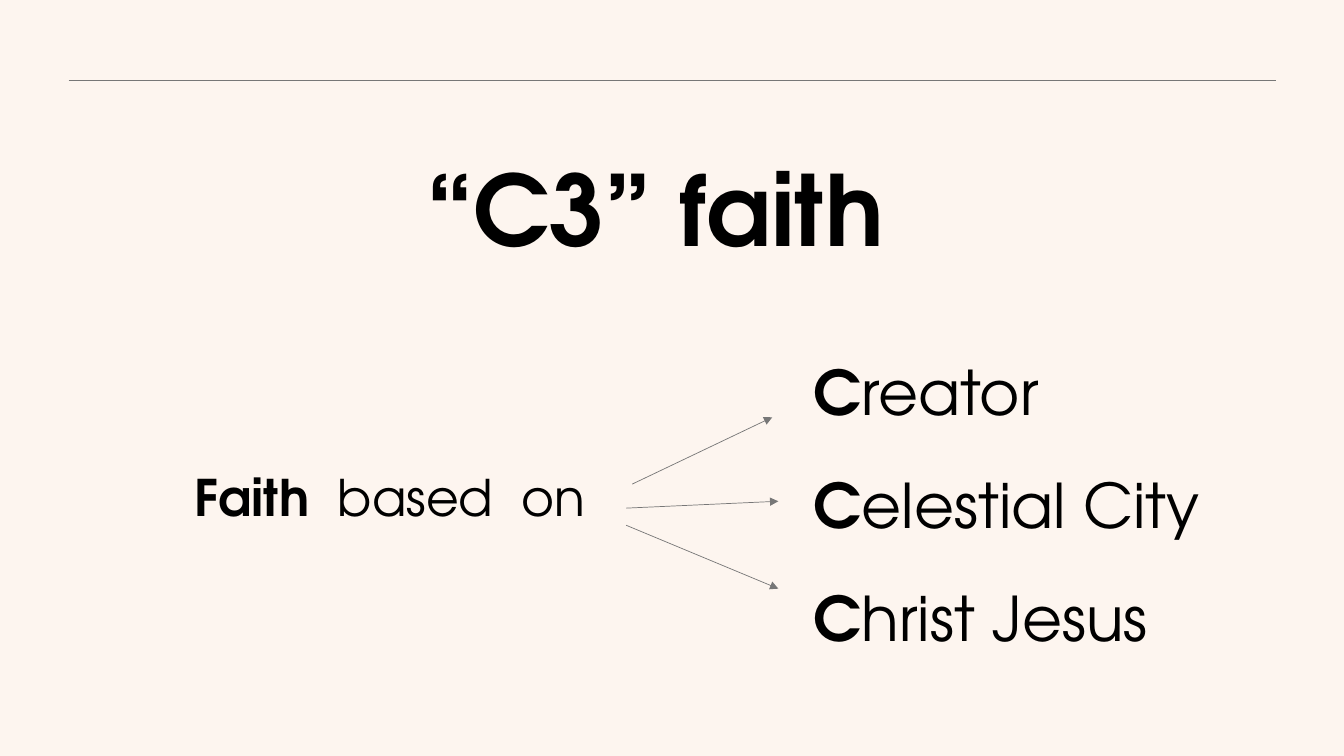
from lxml import etree
from pptx import Presentation
from pptx.dml.color import RGBColor
from pptx.enum.shapes import MSO_CONNECTOR
from pptx.enum.text import MSO_ANCHOR, PP_ALIGN
from pptx.oxml.ns import qn
from pptx.util import Inches, Pt

STRAIGHT = MSO_CONNECTOR.STRAIGHT
TOP, MIDDLE = MSO_ANCHOR.TOP, MSO_ANCHOR.MIDDLE
CENTER, JUSTIFY = PP_ALIGN.CENTER, PP_ALIGN.JUSTIFY

WIDTH, HEIGHT = 13.33, 7.5
FONT = "TeX Gyre Adventor"
BACKGROUND, INK, GRAY = "FDF5EF", "000000", "777777"
INSET = 0.05
WIDE_SPACE = 10


def color(value):
    return RGBColor.from_string(value)


def add_text(slide, box, runs, size, align=JUSTIFY, anchor=TOP, before=0, line_spacing=1.0):
    shape = slide.shapes.add_textbox(*(Inches(length) for length in box))
    frame = shape.text_frame
    frame.word_wrap = True
    frame.vertical_anchor = anchor
    frame.margin_left = frame.margin_right = Inches(INSET)
    frame.margin_top = frame.margin_bottom = Inches(INSET)
    paragraph = frame.paragraphs[0]
    paragraph.alignment = align
    paragraph.space_before = Pt(before)
    paragraph.line_spacing = line_spacing
    for text, bold, spacing in runs:
        run = paragraph.add_run()
        run.text = text
        run.font.name = FONT
        run.font.size = Pt(size)
        run.font.bold = bold
        run.font.color.rgb = color(INK)
        if spacing:
            run.font._element.set("spc", str(spacing * 100))


def add_line(slide, start, end, arrow=False):
    points = (Inches(length) for length in (*start, *end))
    connector = slide.shapes.add_connector(STRAIGHT, *points)
    connector.line.color.rgb = color(GRAY)
    connector.line.width = Pt(0.5)
    if arrow:
        outline = connector.line._get_or_add_ln()
        etree.SubElement(outline, qn("a:tailEnd"), type="triangle")
    etree.SubElement(connector._element.spPr, qn("a:effectLst"))


def add_heading(slide, left, top, width, height):
    add_line(slide, (left, top), (left + width, top))
    box = (left + 0.12, top + 0.61, width - 0.58, height)
    add_text(slide, box, [("“C3” faith", True, 0)], 70,
             align=CENTER, anchor=MIDDLE, line_spacing=0.9)


def add_statement(slide, left, top, width, height):
    runs = [("Faith", True, 0), (" ", True, WIDE_SPACE), ("based", False, 0),
            (" ", False, WIDE_SPACE), ("on", False, 0)]
    add_text(slide, (left, top, width, height), runs, 36, before=10)


def add_arrows(slide, left, top, width, height):
    for start, end in [((0.04, 0.39), (0.96, 0)),
                       ((0, 0.53), (1, 0.49)),
                       ((0, 0.63), (1, 1))]:
        points = [(left + x * width, top + y * height) for x, y in (start, end)]
        add_line(slide, *points, arrow=True)


def add_foundations(slide, left, top, width, row_height, pitch):
    for row, rest in enumerate(["reator", "elestial City", "hrist Jesus"]):
        box = (left, top + row * pitch, width, row_height)
        add_text(slide, box, [("C", True, 0), (rest, False, 0)], 44, before=10)


def main():
    presentation = Presentation()
    presentation.slide_width = Inches(WIDTH)
    presentation.slide_height = Inches(HEIGHT)
    slide = presentation.slides.add_slide(presentation.slide_layouts[6])
    slide.background.fill.solid()
    slide.background.fill.fore_color.rgb = color(BACKGROUND)
    add_heading(slide, 0.68, 0.8, 11.98, 1.45)
    add_statement(slide, 1.88, 4.57, 5.38, 0.88)
    add_arrows(slide, 6.21, 4.14, 1.51, 1.7)
    add_foundations(slide, 8.02, 3.46, 4.26, 0.85, 1.12)
    presentation.save("out.pptx")


if __name__ == "__main__":
    main()
